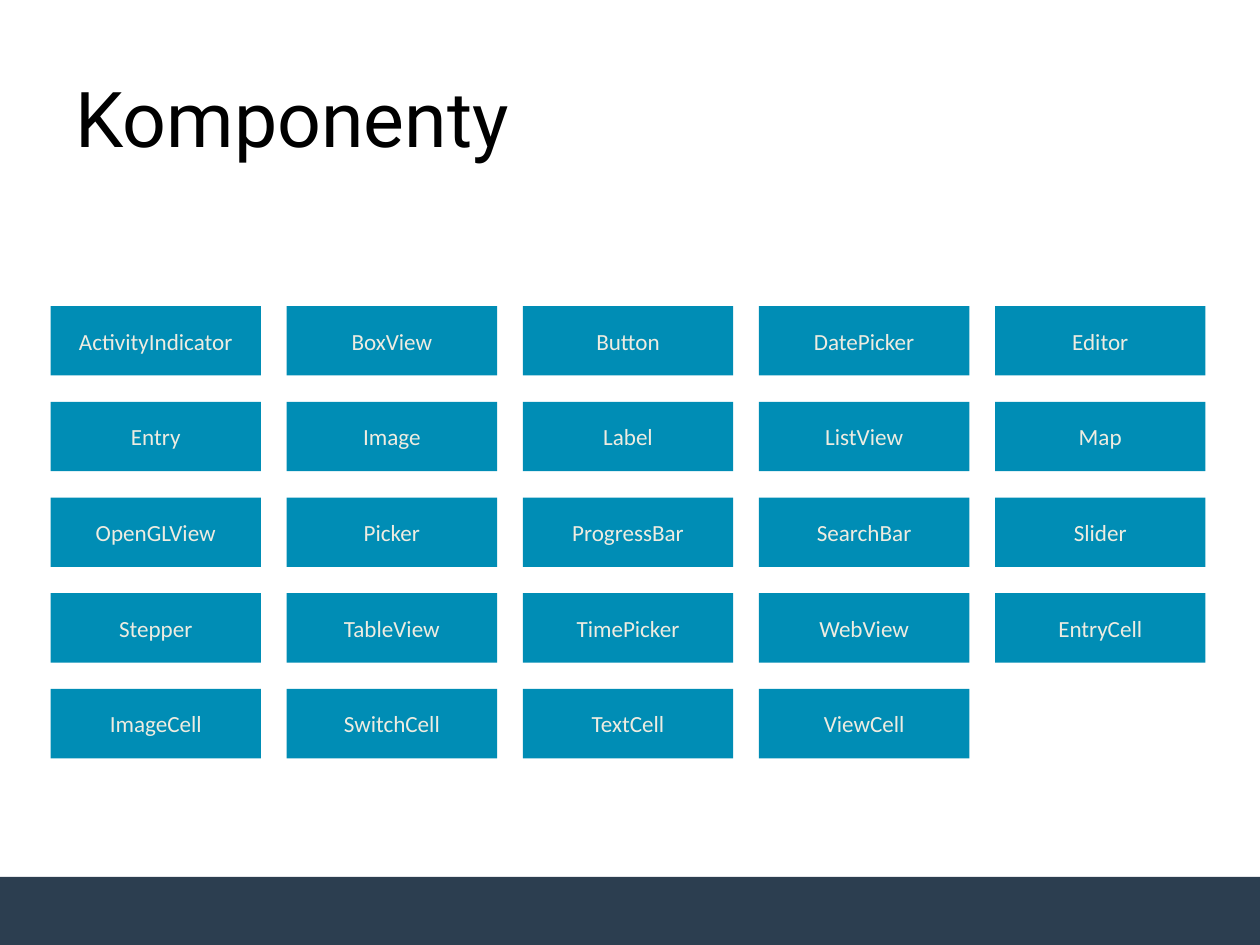
import pptx
import pptx.util
import pptx.dml.color
import pptx.enum.shapes
import pptx.enum.text

Cm = pptx.util.Cm
SHAPES = pptx.enum.shapes.MSO_SHAPE
ALIGN = pptx.enum.text.PP_ALIGN

COLUMNS = 5
COMPONENTS = [
    "ActivityIndicator", "BoxView", "Button", "DatePicker", "Editor",
    "Entry", "Image", "Label", "ListView", "Map",
    "OpenGLView", "Picker", "ProgressBar", "SearchBar", "Slider",
    "Stepper", "TableView", "TimePicker", "WebView", "EntryCell",
    "ImageCell", "SwitchCell", "TextCell", "ViewCell",
]


def color(value):
    return pptx.dml.color.RGBColor.from_string(value)


def write(shape, text, *, font, size, ink, align):
    frame = shape.text_frame
    frame.word_wrap = True
    frame.vertical_anchor = pptx.enum.text.MSO_ANCHOR.MIDDLE
    para = frame.paragraphs[0]
    para.alignment = align
    span = para.add_run()
    span.text = text
    span.font.name = font
    span.font.size = pptx.util.Pt(size)
    span.font.color.rgb = color(ink)


def add_block(page, kind, box, fill):
    block = page.shapes.add_shape(kind, *(Cm(length) for length in box))
    block.shadow.inherit = False
    block.fill.solid()
    block.fill.fore_color.rgb = color(fill)
    block.line.fill.background()
    return block


def add_footer(page, box):
    add_block(page, SHAPES.RECTANGLE, box, "2C3E50")


def add_title(page, box, text):
    title = page.shapes.title
    title.left, title.top, title.width, title.height = (Cm(length) for length in box)
    write(title, text, font="Roboto", size=44, ink="000000", align=ALIGN.LEFT)


def add_component_grid(page, box, names):
    left, top, width, height = box
    tile_width, tile_height = 4.24, 1.4
    rows = -(-len(names) // COLUMNS)
    column_step = (width - tile_width) / (COLUMNS - 1)
    row_step = (height - tile_height) / (rows - 1)
    for index, name in enumerate(names):
        row, column = divmod(index, COLUMNS)
        tile_box = (left + column * column_step, top + row * row_step,
                    tile_width, tile_height)
        tile = add_block(page, SHAPES.ROUNDED_RECTANGLE, tile_box, "008DB5")
        tile.adjustments[0] = 0
        write(tile, name, font="Calibri", size=13.2, ink="EEECE1", align=ALIGN.CENTER)


def main():
    deck = pptx.Presentation()
    deck.slide_width, deck.slide_height = Cm(25.4), Cm(19.05)
    page = deck.slides.add_slide(deck.slide_layouts[5])
    add_footer(page, (0, 17.68, 25.4, 1.42))
    add_component_grid(page, (1.02, 6.17, 23.28, 9.12), COMPONENTS)
    add_title(page, (1.27, 0.76, 22.86, 3.18), "Komponenty")
    deck.save("out.pptx")


if __name__ == "__main__":
    main()
